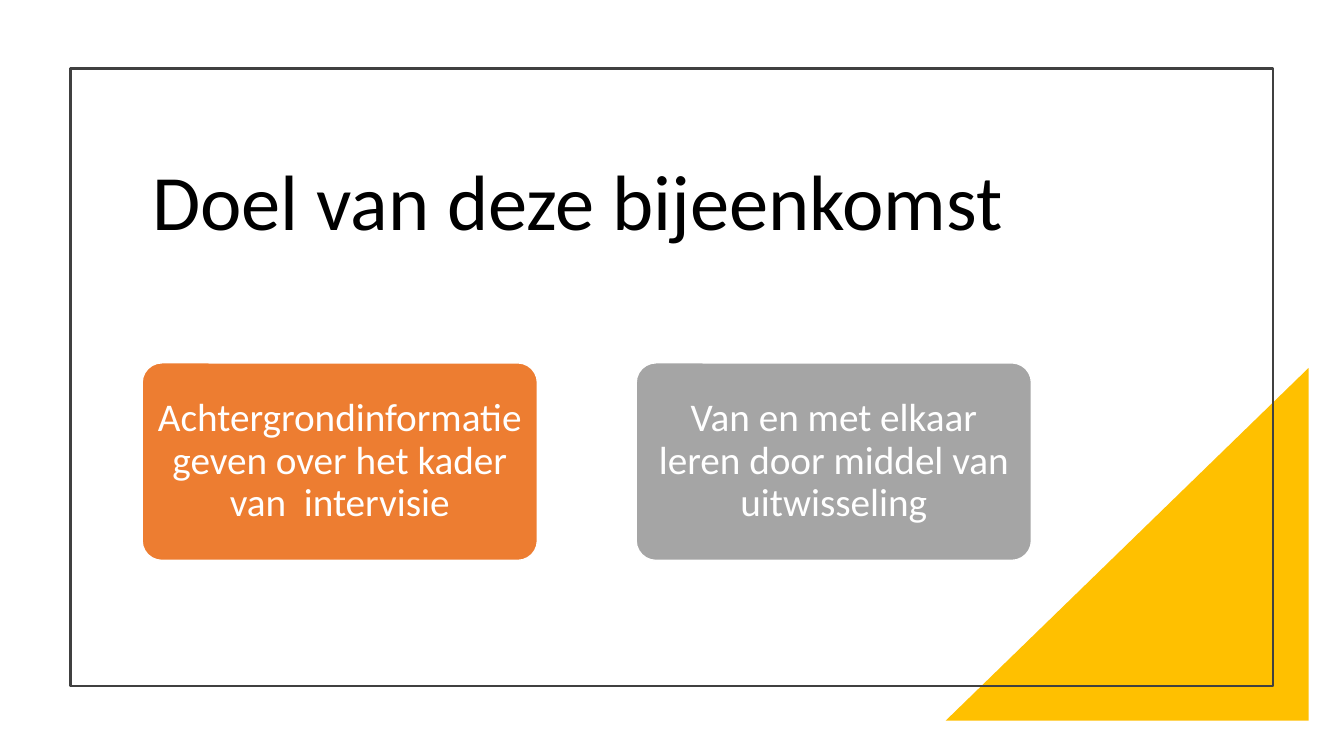
from pptx import Presentation
from pptx.dml.color import RGBColor
from pptx.enum.shapes import MSO_SHAPE as Preset
from pptx.enum.text import MSO_ANCHOR as Anchor, PP_ALIGN as Align
from pptx.util import Inches, Pt

BLACK = RGBColor(0x00, 0x00, 0x00)
WHITE = RGBColor(0xFF, 0xFF, 0xFF)
CHARCOAL = RGBColor(0x40, 0x40, 0x40)
YELLOW = RGBColor(0xFF, 0xC0, 0x00)
ORANGE = RGBColor(0xED, 0x7D, 0x31)
GRAY = RGBColor(0xA5, 0xA5, 0xA5)

FONT = "Calibri"
CARD_LEFT = 1.41
CARD_STEP = 4.9
GOALS = [
    ("Achtergrondinformatie geven over het kader van  intervisie", ORANGE),
    ("Van en met elkaar leren door middel van uitwisseling", GRAY),
]


def add_preset(slide, preset, left, top, width, height, fill=None, line=None, weight=1):
    shape = slide.shapes.add_shape(
        preset, Inches(left), Inches(top), Inches(width), Inches(height)
    )
    shape.shadow.inherit = False
    if fill is None:
        shape.fill.background()
    else:
        shape.fill.solid()
        shape.fill.fore_color.rgb = fill
    if line is None:
        shape.line.fill.background()
    else:
        shape.line.color.rgb = line
        shape.line.width = Pt(weight)
    return shape


def write_text(shape, text, size, color, align):
    text_frame = shape.text_frame
    text_frame.word_wrap = True
    text_frame.vertical_anchor = Anchor.MIDDLE
    text_frame.text = text
    paragraph = text_frame.paragraphs[0]
    paragraph.alignment = align
    paragraph.line_spacing = 0.9
    font = paragraph.runs[0].font
    font.name = FONT
    font.size = Pt(size)
    font.color.rgb = color


def add_corner(slide):
    corner = add_preset(slide, Preset.RIGHT_TRIANGLE, 9.38, 3.65, 3.6, 3.5, fill=YELLOW)
    corner.element.spPr.xfrm.set("flipH", "1")


def add_title(slide, text):
    title = slide.shapes.add_textbox(Inches(1.41), Inches(1.15), Inches(8.83), Inches(1.77))
    write_text(title, text, 56, BLACK, Align.LEFT)


def add_card(slide, left, text, fill):
    card = add_preset(
        slide, Preset.ROUNDED_RECTANGLE, left, 3.6, 3.92, 1.96, fill=fill, line=WHITE
    )
    card.adjustments[0] = 0.1
    text_frame = card.text_frame
    text_frame.margin_left = text_frame.margin_right = Inches(0.06)
    text_frame.margin_top = text_frame.margin_bottom = Inches(0.04)
    write_text(card, text, 28, WHITE, Align.CENTER)


def main():
    presentation = Presentation()
    presentation.slide_width = Inches(13.33)
    presentation.slide_height = Inches(7.5)
    slide = presentation.slides.add_slide(presentation.slide_layouts[6])
    add_corner(slide)
    add_preset(slide, Preset.RECTANGLE, 0.7, 0.68, 11.93, 6.13, line=CHARCOAL, weight=1.5)
    add_title(slide, "Doel van deze bijeenkomst")
    for index, (text, fill) in enumerate(GOALS):
        add_card(slide, CARD_LEFT + index * CARD_STEP, text, fill)
    presentation.save("out.pptx")


if __name__ == "__main__":
    main()
